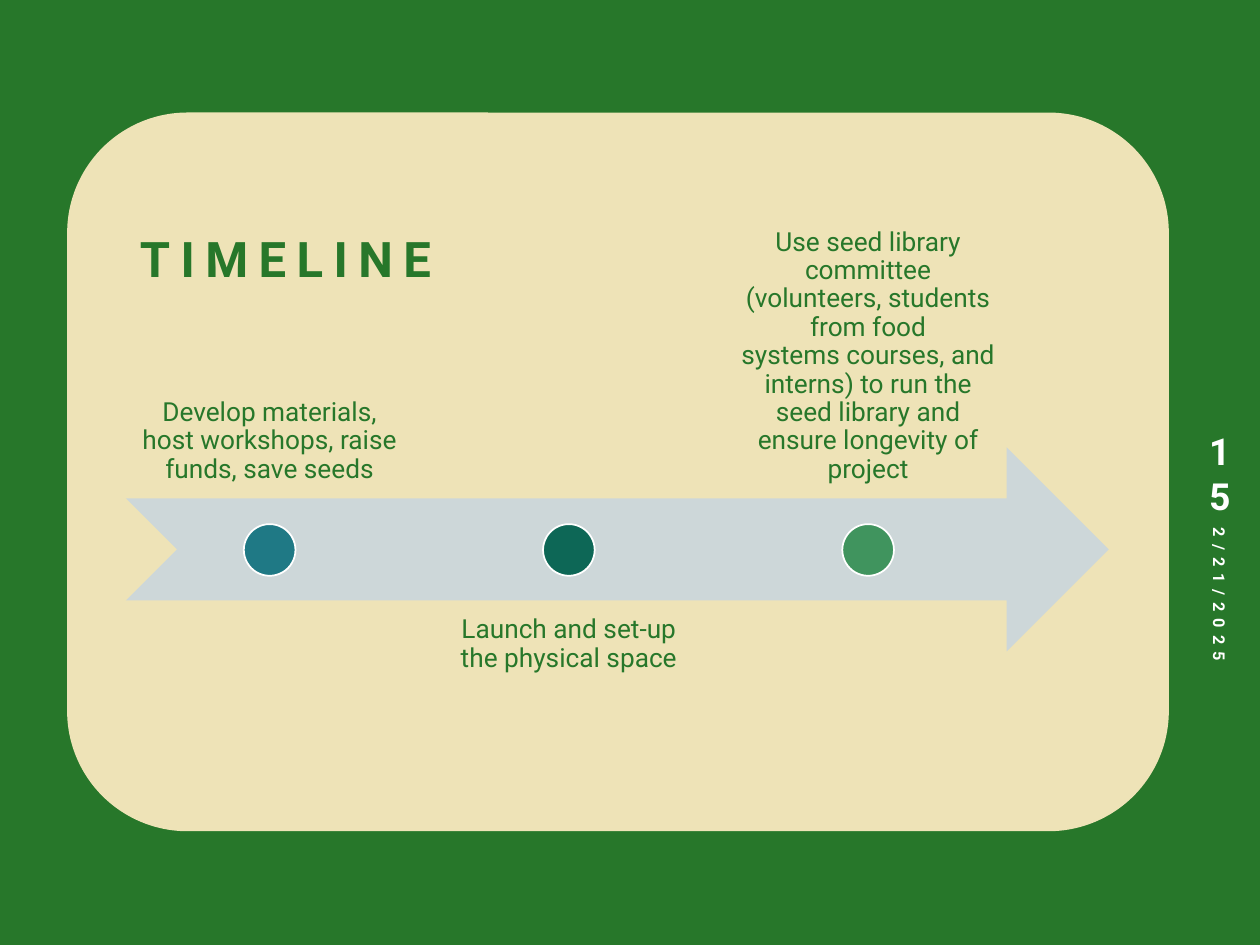
from pptx import Presentation
from pptx.dml.color import RGBColor
from pptx.enum.shapes import MSO_SHAPE
from pptx.enum.text import MSO_ANCHOR, MSO_AUTO_SIZE, PP_ALIGN
from pptx.util import Inches, Pt

GREEN, CREAM, GREY, WHITE = "27772A", "EEE3B7", "CDD7D9", "FFFFFF"
NO_BREAK_SPACE = chr(160)


def add_filled_shape(kind, left, top, width, height, fill, line=None):
    shape = slide.shapes.add_shape(
        kind, Inches(left), Inches(top), Inches(width), Inches(height))
    shape.shadow.inherit = False
    shape.fill.solid()
    shape.fill.fore_color.rgb = RGBColor.from_string(fill)
    if line:
        shape.line.color.rgb = RGBColor.from_string(line)
        shape.line.width = Pt(1)
    else:
        shape.line.fill.background()
    return shape


def write_text(shape, text, size, color, anchor, align, bold=False,
               line_spacing=None, letter_spacing=None):
    """Write one wrapped paragraph; letter_spacing is in points."""
    frame = shape.text_frame
    frame.word_wrap = True
    frame.auto_size = MSO_AUTO_SIZE.NONE
    frame.vertical_anchor = anchor
    paragraph = frame.paragraphs[0]
    paragraph.alignment = align
    if line_spacing:
        paragraph.line_spacing = line_spacing
    run = paragraph.add_run()
    run.text = text
    run.font.name = "Roboto"
    run.font.size = Pt(size)
    run.font.bold = bold
    run.font.color.rgb = RGBColor.from_string(color)
    if letter_spacing:
        run.font._element.set("spc", str(letter_spacing * 100))


presentation = Presentation()
presentation.slide_width = Inches(10)
presentation.slide_height = Inches(7.5)
slide = presentation.slides.add_slide(presentation.slide_layouts[5])
slide.background.fill.solid()
slide.background.fill.fore_color.rgb = RGBColor.from_string(GREEN)

panel = add_filled_shape(MSO_SHAPE.ROUNDED_RECTANGLE, 0.54, 0.9, 8.73, 5.69, CREAM, CREAM)

title = slide.shapes.title
panel.element.addnext(title.element)  # bring the title in front of the panel
title.left, title.top = Inches(1.01), Inches(1.39)
title.width, title.height = Inches(7.58), Inches(0.94)
write_text(title, "TIMELINE", 28, GREEN, MSO_ANCHOR.BOTTOM, PP_ALIGN.LEFT,
           bold=True, line_spacing=1.2, letter_spacing=6)

date = slide.shapes.add_textbox(Inches(8.22), Inches(5.4), Inches(2.92), Inches(0.3))
date.rotation = 90
write_text(date, "2/21/2025", 9.3, WHITE, MSO_ANCHOR.MIDDLE, PP_ALIGN.LEFT,
           bold=True, letter_spacing=4)

# The narrow box stacks the two digits
page_number = slide.shapes.add_textbox(Inches(9.42), Inches(3.52), Inches(0.52), Inches(0.47))
write_text(page_number, "15", 21.3, WHITE, MSO_ANCHOR.MIDDLE, PP_ALIGN.CENTER, bold=True)

add_filled_shape(MSO_SHAPE.NOTCHED_RIGHT_ARROW, 1, 3.55, 7.8, 1.62, GREY)

milestones = [
    ("Develop materials, host workshops, raise funds, save seeds", "1F7985"),
    ("Launch and set-up the physical space", "0D6756"),
    (f"Use seed library committee (volunteers,{NO_BREAK_SPACE}students from food "
     f"systems{NO_BREAK_SPACE}courses, and interns) to run the seed library "
     "and ensure longevity of project", "40945E"),
]
label_width, label_height, dot_size, step = 2.26, 1.62, 0.41, 2.375
for index, (text, color) in enumerate(milestones):
    left = 1.01 + index * step
    above = index % 2 == 0
    label = slide.shapes.add_textbox(Inches(left), Inches(2.34 if above else 4.77),
                                     Inches(label_width), Inches(label_height))
    frame = label.text_frame
    frame.margin_left = frame.margin_right = Inches(0.12)
    frame.margin_top = frame.margin_bottom = Inches(0.12)
    write_text(label, text, 15, GREEN, MSO_ANCHOR.BOTTOM if above else MSO_ANCHOR.TOP,
               PP_ALIGN.CENTER, line_spacing=0.9)
    add_filled_shape(MSO_SHAPE.OVAL, left + (label_width - dot_size) / 2, 4.16,
                     dot_size, dot_size, color, WHITE)

presentation.save("out.pptx")
